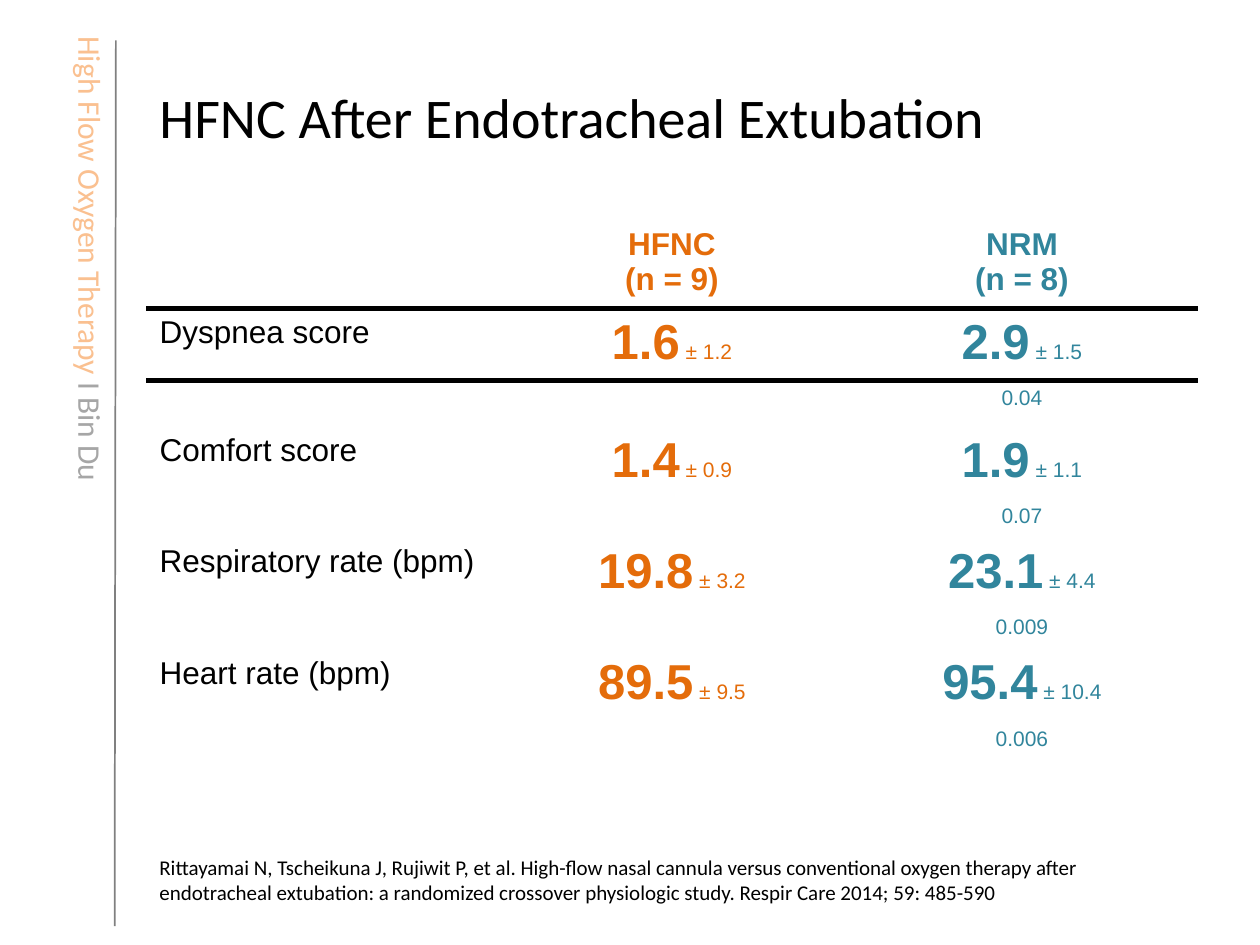
from lxml.etree import SubElement, fromstring
from pptx import Presentation
from pptx.dml.color import RGBColor
from pptx.enum.shapes import MSO_CONNECTOR
from pptx.enum.text import MSO_ANCHOR, PP_ALIGN
from pptx.oxml.ns import nsdecls, qn
from pptx.util import Pt

HUES = {"black": "000000", "gray": "808080", "pale": "A6A6A6",
        "peach": "FAC090", "orange": "E46C0A", "teal": "31859C"}
ROWS = [
    ("Dyspnea score", ("1.6", "1.2"), ("2.9", "1.5"), "0.04"),
    ("Comfort score", ("1.4", "0.9"), ("1.9", "1.1"), "0.07"),
    ("Respiratory rate (bpm)", ("19.8", "3.2"), ("23.1", "4.4"), "0.009"),
    ("Heart rate (bpm)", ("89.5", "9.5"), ("95.4", "10.4"), "0.006"),
]
CITE = ("Rittayamai N, Tscheikuna J, Rujiwit P, et al. High-flow nasal cannula "
        "versus conventional oxygen therapy after endotracheal extubation: "
        "a randomized crossover physiologic study. Respir Care 2014; 59: 485-590")


class Page:
    """Style and current slide, with a method for each kind of element."""

    def __init__(self, slide):
        self.slide = slide

    def run(self, para, text, size, hue="black", bold=False, face="Calibri"):
        run = para.add_run()
        run.text = text
        font = run.font
        font.name, font.size, font.bold = face, Pt(size), bold
        font.color.rgb = RGBColor.from_string(HUES[hue])

    def text(self, box, parts, size, wrap=True, anchor=MSO_ANCHOR.TOP, turn=0):
        shape = self.slide.shapes.add_textbox(*map(Pt, box))
        shape.rotation = turn
        frame = shape.text_frame
        frame.word_wrap, frame.vertical_anchor = wrap, anchor
        for text, hue in parts:
            self.run(frame.paragraphs[0], text, size, hue)

    def line(self, start, end, hue, width):
        line = self.slide.shapes.add_connector(
            MSO_CONNECTOR.STRAIGHT, *map(Pt, start + end))
        line.line.color.rgb = RGBColor.from_string(HUES[hue])
        line.line.width = Pt(width)
        SubElement(line._element.spPr, qn("a:effectLst"))

    def table(self, box, highs, cols):
        table = self.slide.shapes.add_table(len(highs), cols, *map(Pt, box)).table
        table.first_row = table.horz_banding = False
        for row, high in zip(table.rows, highs):
            row.height = Pt(high)
        for cell in table.iter_cells():
            cell.fill.background()
        return table

    def cell(self, cell, lines, hue="black", align=PP_ALIGN.CENTER):
        frame = cell.text_frame
        for num, parts in enumerate(lines):
            para = frame.add_paragraph() if num else frame.paragraphs[0]
            para.alignment = align
            for text, size, bold in parts:
                self.run(para, text, size, hue, bold, "Arial")

    def blank(self, cell):
        SubElement(cell.text_frame.paragraphs[0]._p, qn("a:endParaRPr"), sz="1200")

    def rule(self, cell, side, width):
        edge = fromstring(
            f'<a:{side} {nsdecls("a")} w="{Pt(width)}"><a:solidFill>'
            f'<a:srgbClr val="{HUES["black"]}"/></a:solidFill></a:{side}>')
        cell._tc.get_or_add_tcPr().insert(0, edge)


def main():
    deck = Presentation()
    deck.slide_width, deck.slide_height = Pt(720), Pt(540)
    page = Page(deck.slides.add_slide(deck.slide_layouts[6]))
    left, wide = 84, 600

    page.line((66.24, 23.04), (65.52, 529.2), "gray", 1)
    page.text((-84.24, 135.36, 272.16, 28.8),
              [("High Flow Oxygen Therapy ", "peach"), ("Ι Bin Du", "pale")],
              18, wrap=False, turn=90)
    page.text((left, 21.6, wide, 90),
              [("HFNC After Endotracheal Extubation", "black")],
              32, anchor=MSO_ANCHOR.MIDDLE)
    page.text((left, 484.5, wide, 36), [(CITE, "black")], 12)

    highs = [50, 39.5, 26.5] + [39.5, 22.8] * 3
    table = page.table((left, 126, wide, sum(highs)), highs, 3)
    heads = [("HFNC", 9, "orange"), ("NRM", 8, "teal")]
    for col, (name, count, hue) in enumerate(heads, 1):
        lines = [[(name, 18, True)], [(f"(n = {count})", 18, True)]]
        page.cell(table.cell(0, col), lines, hue)
    for col in range(3):
        page.rule(table.cell(0, col), "lnB", 3)
        page.rule(table.cell(1, col), "lnT", 3)
    for num, (label, high, mask, prob) in enumerate(ROWS):
        row = 1 + 2 * num
        page.cell(table.cell(row, 0), [[(label, 18, False)]], align=PP_ALIGN.LEFT)
        for col, (mean, dev) in enumerate((high, mask), 1):
            page.cell(table.cell(row, col),
                      [[(mean, 28, True), (f" ± {dev}", 12, False)]],
                      heads[col - 1][2])
            page.blank(table.cell(row + 1, col - 1))
        page.cell(table.cell(row + 1, 2), [[(prob, 12, False)]], "teal")
    deck.save("out.pptx")


if __name__ == "__main__":
    main()
